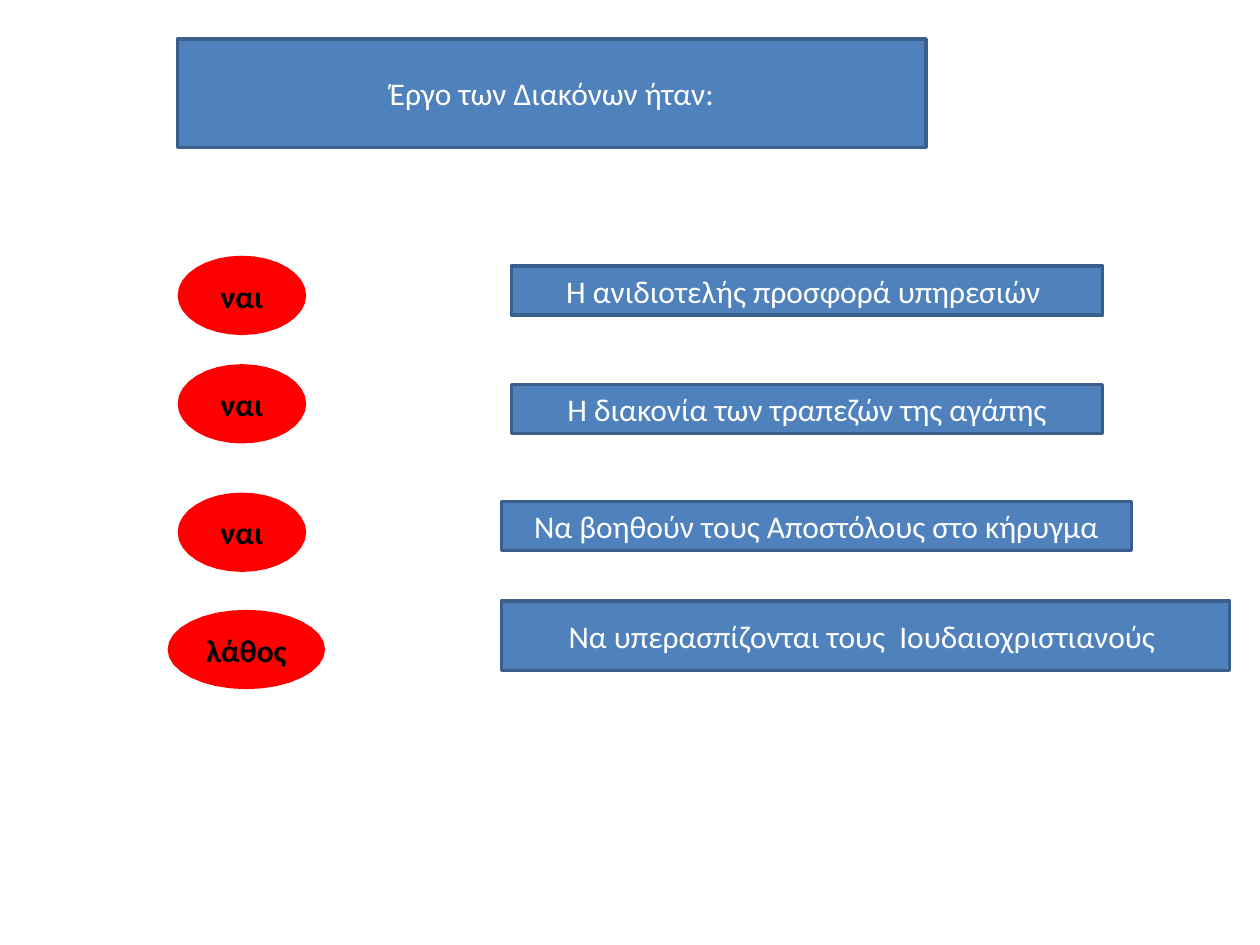
from pptx import Presentation, util as u
from pptx.dml.color import RGBColor
from pptx.enum import shapes, text

THEME = {
    "face": "Calibri",
    "size": 18,
    "box": {"fill": "4F81BD", "line": "3A5F8C", "ink": "FFFFFF", "bold": False},
    "badge": {"fill": "FF0000", "line": None, "ink": "000000", "bold": True},
}
LINE = 2

TITLE = ("Έργο των Διακόνων ήταν:", (1.41, 0.31, 5.94, 0.86))

# duty, its box, verdict, top of the verdict badge
ROWS = [
    ("H ανιδιοτελής προσφορά υπηρεσιών ", (4.06, 2.11, 4.69, 0.39), "ναι", 2.03),
    ("Η διακονία των τραπεζών της αγάπης", (4.06, 3.05, 4.69, 0.39), "ναι", 2.89),
    ("Να βοηθούν τους Αποστόλους στο κήρυγμα", (3.98, 3.98, 5, 0.39), "ναι", 3.91),
    ("Να υπερασπίζονται τους  Ιουδαιοχριστιανούς ", (3.98, 4.77, 5.78, 0.55), "λάθος", 4.84),
]
BADGE = {"ναι": (1.41, 1.02), "λάθος": (1.33, 1.25)}  # left, width
HIGH = 0.63


def add(slide, kind, words, place, look):
    shape = slide.shapes.add_shape(kind, *map(u.Inches, place))
    shape.shadow.inherit = False
    shape.fill.solid()
    shape.fill.fore_color.rgb = RGBColor.from_string(look["fill"])
    if look["line"]:
        shape.line.color.rgb = RGBColor.from_string(look["line"])
        shape.line.width = u.Pt(LINE)
    else:
        shape.line.fill.background()
    frame = shape.text_frame
    frame.word_wrap = True
    frame.vertical_anchor = text.MSO_ANCHOR.MIDDLE
    para = frame.paragraphs[0]
    para.alignment = text.PP_ALIGN.CENTER
    run = para.add_run()
    run.text = words
    form = {"name": THEME["face"], "size": u.Pt(THEME["size"]), "bold": look["bold"]}
    for key, value in form.items():
        setattr(run.font, key, value)
    run.font.color.rgb = RGBColor.from_string(look["ink"])
    return shape


def main():
    deck = Presentation()
    deck.slide_width, deck.slide_height = u.Inches(10), u.Inches(7.5)
    slide = deck.slides.add_slide(deck.slide_layouts[6])
    rect = shapes.MSO_SHAPE.RECTANGLE
    star = shapes.MSO_SHAPE.STAR_16_POINT

    add(slide, rect, *TITLE, THEME["box"])
    for duty, place, _, _ in ROWS:
        add(slide, rect, duty, place, THEME["box"])
    for _, _, verdict, top in ROWS:
        left, wide = BADGE[verdict]
        badge = add(slide, star, verdict, (left, top, wide, HIGH), THEME["badge"])
        badge.adjustments[0] = 0.5
    deck.save("out.pptx")


if __name__ == "__main__":
    main()
